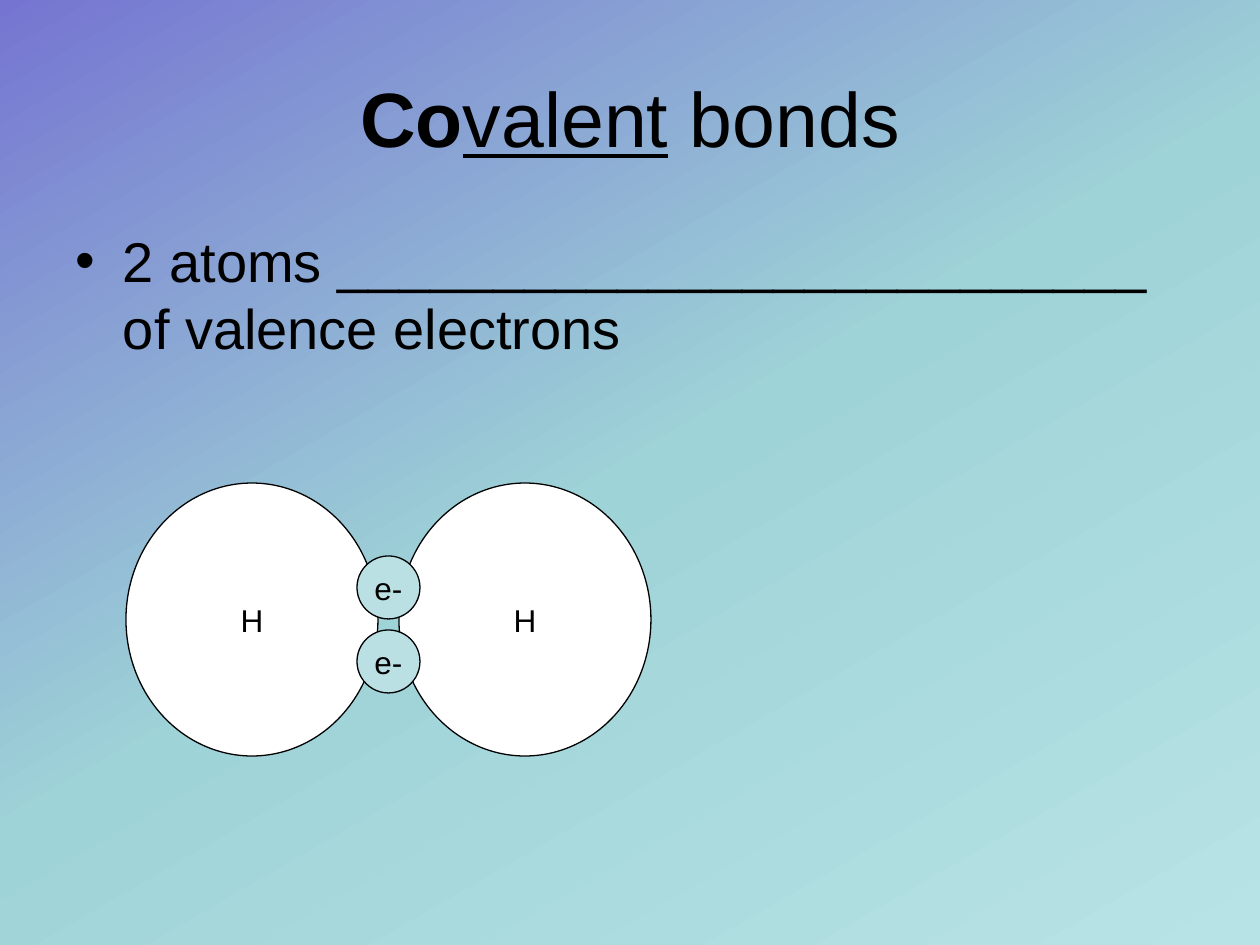
"""Build the slide on covalent bonds."""
from copy import deepcopy
from typing import NamedTuple

from pptx import Presentation
from pptx.dml.color import RGBColor
from pptx.enum.shapes import MSO_SHAPE
from pptx.enum.text import MSO_ANCHOR, MSO_AUTO_SIZE, PP_ALIGN
from pptx.shapes.base import BaseShape
from pptx.slide import Slide
from pptx.text.text import _Paragraph as Para
from pptx.util import Emu, Pt

OVAL = MSO_SHAPE.OVAL
MIDDLE = MSO_ANCHOR.MIDDLE
TOP = MSO_ANCHOR.TOP
CENTER = PP_ALIGN.CENTER
NO_FIT = MSO_AUTO_SIZE.NONE

BLACK = RGBColor(0x00, 0x00, 0x00)
WHITE = RGBColor(0xFF, 0xFF, 0xFF)
PALE = RGBColor(0xBB, 0xE0, 0xE3)
STOPS = (
    (0, RGBColor(0x75, 0x75, 0xD1)),
    (0.5, RGBColor(0x9E, 0xD3, 0xD7)),
    (1, RGBColor(0xB8, 0xE3, 0xE6)),
)
FONT = "Arial"
SCALE = 914400 / 126


class Box(NamedTuple):
    left: int
    top: int
    width: int
    height: int


class Ball(NamedTuple):
    label: str
    box: Box
    fill: RGBColor


ATOMS = tuple(Ball("H", Box(left, 483, 252, 273), WHITE) for left in (126, 399))
PAIR = tuple(Ball("e-", Box(357, top, 63, 63), PALE) for top in (556, 630))


def px(count: int) -> Emu:
    return Emu(round(count * SCALE))


def add_run(para: Para, text: str, size: int, bold: bool = False, under: bool = False) -> None:
    run = para.add_run()
    run.text = text
    font = run.font
    font.name, font.size = FONT, Pt(size)
    font.bold, font.underline = bold, under
    font.color.rgb = BLACK


def place(shape: BaseShape, box: Box, anchor: MSO_ANCHOR) -> Para:
    shape.left, shape.top, shape.width, shape.height = map(px, box)
    frame = shape.text_frame
    frame.auto_size = NO_FIT
    frame.vertical_anchor = anchor
    return frame.paragraphs[0]


def paint_back(slide: Slide) -> None:
    fill = slide.background.fill
    fill.gradient()
    fill.gradient_angle = 300
    stops = slide.element.xpath(".//a:gsLst")[0]
    stops.append(deepcopy(stops[0]))
    for stop, (pos, color) in zip(fill.gradient_stops, STOPS):
        stop.position = pos
        stop.color.rgb = color


def draw_ball(slide: Slide, ball: Ball) -> None:
    shape = slide.shapes.add_shape(OVAL, *map(px, ball.box))
    shape.shadow.inherit = False
    shape.fill.solid()
    shape.fill.fore_color.rgb = ball.fill
    shape.line.color.rgb = BLACK
    shape.line.width = Pt(0.75)
    shape.text_frame.word_wrap = False
    para = place(shape, ball.box, MIDDLE)
    para.alignment = CENTER
    add_run(para, ball.label, 18)


def main() -> None:
    deck = Presentation()
    deck.slide_width, deck.slide_height = px(1260), px(945)
    slide = deck.slides.add_slide(deck.slide_layouts[1])
    paint_back(slide)

    title = place(slide.shapes.title, Box(63, 38, 1134, 158), MIDDLE)
    title.alignment = CENTER
    add_run(title, "Co", 44, bold=True)
    add_run(title, "valent", 44, under=True)
    add_run(title, " bonds", 44)

    body = place(slide.placeholders[1], Box(63, 220, 1134, 624), TOP)
    add_run(body, f"2 atoms {'_' * 26} of valence electrons", 32)

    for ball in ATOMS + PAIR:
        draw_ball(slide, ball)
    deck.save("out.pptx")


if __name__ == "__main__":
    main()
